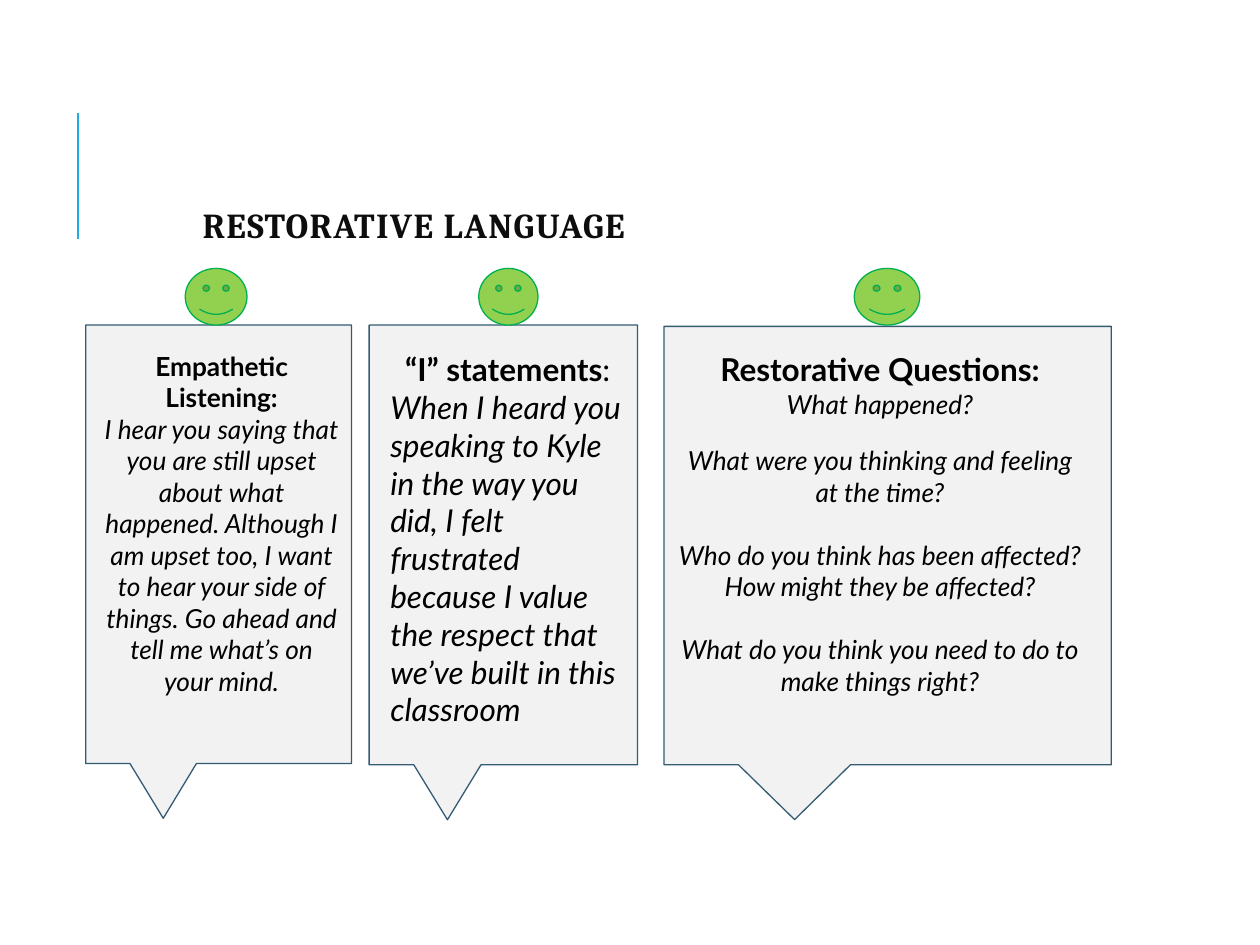
"""Build the Restorative Language slide with three speech callouts."""
from pptx import Presentation
from pptx import util as u
from pptx.dml.color import RGBColor
from pptx.enum import shapes, text
from pptx.oxml.xmlchemy import OxmlElement

COLORS = {
    "accent": "1CADE4", "card": "F2F2F2", "card_line": "335B74",
    "face": "92D050", "face_line": "00B050", "title": "0D0D0D", "body": "000000",
}
CENTER, LEFT = text.PP_ALIGN.CENTER, text.PP_ALIGN.LEFT
BOLD, ITALIC = {"bold": True}, {"italic": True}

CARDS = [
    {"card": (0.68, 2.58, 2.11, 3.48), "face": (1.47, 0.49), "text": (0.73, 2.06),
     "paras": [
         (CENTER, 0, [("Empathetic Listening:", 15, BOLD)]),
         (CENTER, 0, [("I hear you saying that you are still upset about what happened. "
                       "Although I am upset too, I want to hear your side of things. "
                       "Go ahead and tell me what’s on your mind.", 15, ITALIC)])]},
    {"card": (2.93, 2.58, 2.13, 3.49), "face": (3.8, 0.47), "text": (3, 2.06),
     "paras": [
         (CENTER, 0, [("“I” statements", 18, BOLD), (":", 18, {})]),
         (LEFT, 0, [("When I heard you speaking to Kyle in the way you did, I felt "
                     "frustrated because I value the respect that we’ve built in "
                     "this classroom", 18, ITALIC)])]},
    {"card": (5.27, 2.59, 3.55, 3.48), "face": (6.78, 0.52), "text": (5.27, 3.43),
     "paras": [
         (CENTER, 0, [("Restorative Questions:", 18, BOLD)]),
         (CENTER, 0, [("What happened?", 15, ITALIC)]),
         (CENTER, 14.4, [("What were you thinking and feeling at the time?", 15, ITALIC)]),
         (CENTER, 18, [("Who do you think has been affected? "
                        "How might they be affected?", 15, ITALIC)]),
         (CENTER, 18, [("What do you think you need to do to make things right?",
                        15, ITALIC)])]},
]


def rgb(name):
    """Return the named colour."""
    return RGBColor.from_string(COLORS[name])


def set_attrs(obj, values):
    """Set each attribute in values on obj."""
    for name, value in values.items():
        setattr(obj, name, value)


def add_rule(s, x, top, bottom):
    """Add the vertical accent line."""
    sp = s.shapes.add_connector(shapes.MSO_CONNECTOR.STRAIGHT, u.Inches(x),
                                u.Inches(bottom), u.Inches(x), u.Inches(top))
    sp.line.color.rgb = rgb("accent")
    sp.line.width = u.Pt(1.5)
    sp._element.spPr.append(OxmlElement("a:effectLst"))


def add_preset(s, kind, box, color):
    """Add a filled and outlined preset shape."""
    sp = s.shapes.add_shape(kind, *map(u.Inches, box))
    sp.shadow.inherit = False
    sp.fill.solid()
    sp.fill.fore_color.rgb = rgb(color)
    sp.line.color.rgb = rgb(color + "_line")
    sp.line.width = u.Pt(0.75)
    return sp


def add_text(s, box, paras, font="Lato", color="body"):
    """Add a wrapped text box of (alignment, space before, runs) and return its frame."""
    tf = s.shapes.add_textbox(*map(u.Inches, box)).text_frame
    sides = ("left", "top", "right", "bottom")
    set_attrs(tf, {"word_wrap": True, **{f"margin_{side}": u.Inches(0.1) for side in sides}})
    for i, (align, before, runs) in enumerate(paras):
        p = tf.add_paragraph() if i else tf.paragraphs[0]
        set_attrs(p, {"alignment": align, "space_before": u.Pt(before)})
        for words, size, style in runs:
            r = p.add_run()
            r.text = words
            set_attrs(r.font, {"name": font, "size": u.Pt(size), **style})
            r.font.color.rgb = rgb(color)
    return tf


def add_title(s):
    """Add the letter-spaced slide title."""
    tf = add_text(s, (1.51, 1.59, 4.24, 0.44),
                  [(LEFT, 0, [("RESTORATIVE LANGUAGE", 20, BOLD)])], "Cambria", "title")
    tf.vertical_anchor = text.MSO_ANCHOR.MIDDLE
    p = tf.paragraphs[0]
    p.line_spacing = 0.8
    p.runs[0].font._element.set("spc", "80")


def add_card(s, card):
    """Add a callout with its smiley and text."""
    sp = add_preset(s, shapes.MSO_SHAPE.RECTANGULAR_CALLOUT, card["card"], "card")
    sp.adjustments[0], sp.adjustments[1] = -0.208, 0.625
    x, width = card["face"]
    add_preset(s, shapes.MSO_SHAPE.SMILEY_FACE, (x, 2.13, width, 0.45), "face")
    x, width = card["text"]
    add_text(s, (x, 2.68, width, 3.17), card["paras"])


def main():
    """Build and save the slide."""
    prs = Presentation()
    set_attrs(prs, {"slide_width": u.Inches(10), "slide_height": u.Inches(7.5)})
    s = prs.slides.add_slide(prs.slide_layouts[6])
    add_rule(s, 0.62, 0.9, 1.9)
    for card in CARDS:
        add_card(s, card)
    add_title(s)
    prs.save("out.pptx")


if __name__ == "__main__":
    main()
